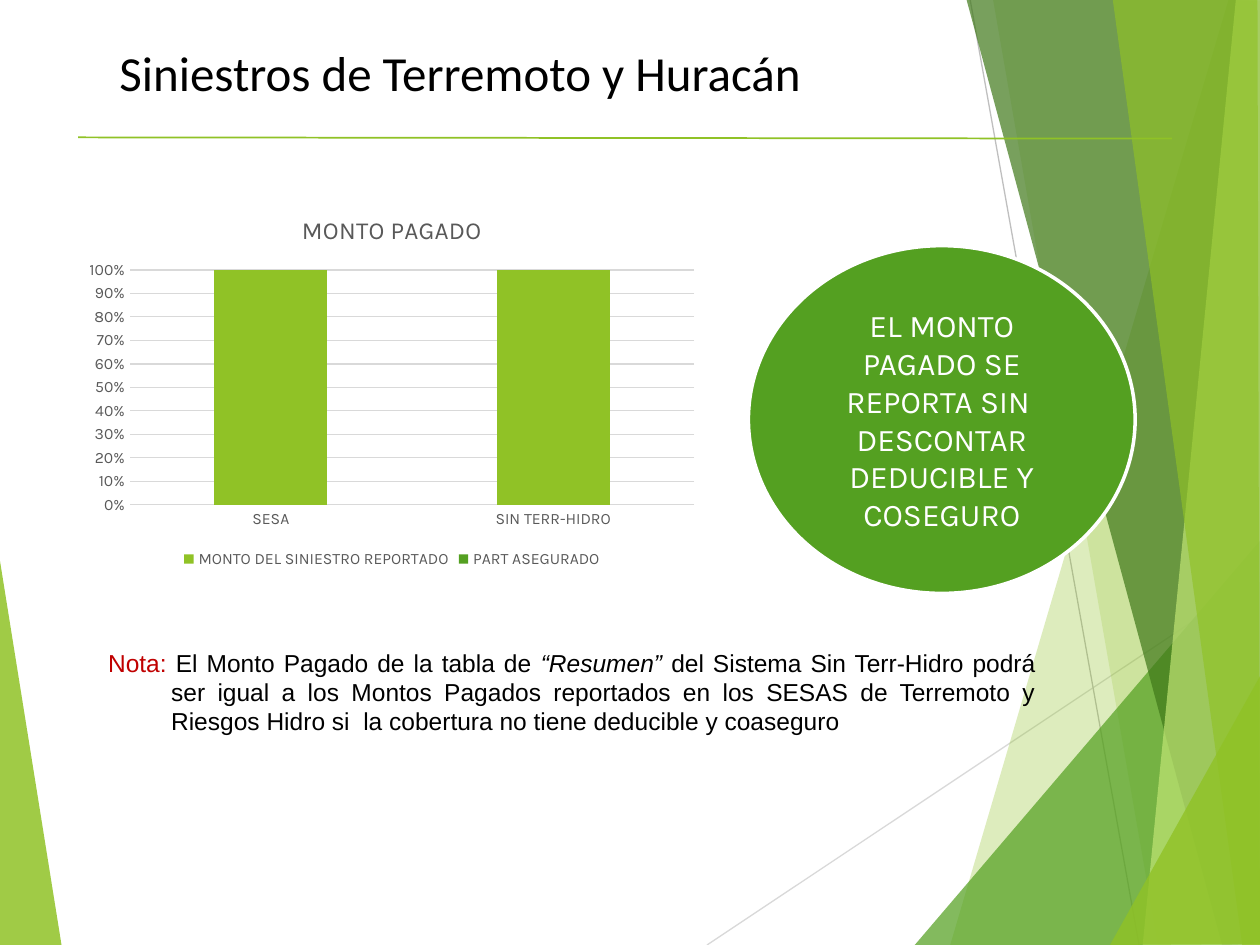
"""Builds the slide on earthquake and hurricane claims."""
from dataclasses import dataclass

from lxml.etree import SubElement
from pptx import Presentation
from pptx.chart.data import CategoryChartData
from pptx.dml.color import RGBColor
from pptx.enum.chart import XL_CHART_TYPE, XL_LEGEND_POSITION, XL_TICK_MARK
from pptx.enum.shapes import MSO_CONNECTOR, MSO_SHAPE
from pptx.enum.text import MSO_ANCHOR, PP_ALIGN
from pptx.oxml.ns import qn
from pptx.util import Pt


@dataclass(frozen=True)
class Theme:
    lime: str = "90C226"
    green: str = "54A021"
    forest: str = "3F7819"
    pale: str = "C0E474"
    white: str = "FFFFFF"
    black: str = "000000"
    red: str = "C00000"
    gray: str = "595959"
    silver: str = "BFBFBF"
    light: str = "D9D9D9"
    title: int = 28
    bubble: int = 18
    body: int = 14
    chart: int = 10
    label: int = 9
    heading_font: str = "Calibri"
    body_font: str = "Arial"
    accent_font: str = "Karla"


def apply(obj, values):
    for name, value in values.items():
        setattr(obj, name, value)


class Deck:
    def __init__(self, theme):
        self.theme = theme
        self.prs = Presentation()
        apply(self.prs, {"slide_width": Pt(720), "slide_height": Pt(540)})
        self.s = self.prs.slides.add_slide(self.prs.slide_layouts[6])

    def font(self, font, name, size, color, **extra):
        apply(font, {"name": name, "size": Pt(size), **extra})
        font.color.rgb = RGBColor.from_string(color)

    def fill(self, sp, color):
        sp.shadow.inherit = False
        sp.fill.solid()
        sp.fill.fore_color.rgb = RGBColor.from_string(color)

    def facet(self, color, opacity, points):
        start, *rest = [(Pt(x), Pt(y)) for x, y in points]
        builder = self.s.shapes.build_freeform(*start, scale=1.0)
        builder.add_line_segments(rest, close=True)
        sp = builder.convert_to_shape()
        self.fill(sp, color)
        sp.line.fill.background()
        clr = sp._element.spPr.find(qn("a:solidFill")).find(qn("a:srgbClr"))
        SubElement(clr, qn("a:alpha")).set("val", str(opacity * 1000))

    def line(self, color, width, *ends):
        sp = self.s.shapes.add_connector(MSO_CONNECTOR.STRAIGHT, *map(Pt, ends))
        sp.line.color.rgb = RGBColor.from_string(color)
        sp.line.width = Pt(width)
        SubElement(sp._element.spPr, qn("a:effectLst"))

    def add_runs(self, sp, runs, name, size, align):
        tf = sp.text_frame
        tf.word_wrap = True
        p = tf.paragraphs[0]
        p.alignment = align
        for text, color, italic in runs:
            r = p.add_run()
            r.text = text
            self.font(r.font, name, size, color, italic=italic)
        return p

    def text(self, box, runs, name, size, align):
        sp = self.s.shapes.add_textbox(*map(Pt, box))
        return self.add_runs(sp, runs, name, size, align)

    def bubble(self, box, text):
        t = self.theme
        sp = self.s.shapes.add_shape(MSO_SHAPE.FLOWCHART_CONNECTOR, *map(Pt, box))
        self.fill(sp, t.green)
        sp.line.color.rgb = RGBColor.from_string(t.white)
        sp.line.width = Pt(2)
        sp.text_frame.vertical_anchor = MSO_ANCHOR.MIDDLE
        self.add_runs(sp, [(text, t.white, False)], t.accent_font, t.bubble, PP_ALIGN.CENTER)

    def chart(self, box, title, categories, series):
        t = self.theme
        data = CategoryChartData()
        data.categories = categories
        for name, values, _ in series:
            data.add_series(name, values)
        kind = XL_CHART_TYPE.COLUMN_STACKED_100
        chart = self.s.shapes.add_chart(kind, *map(Pt, box), data).chart
        self.font(chart.font, t.accent_font, t.chart, t.black)
        apply(chart, {"has_title": True, "has_legend": True})
        tf = chart.chart_title.text_frame
        tf.text = title
        self.font(tf.paragraphs[0].runs[0].font, t.accent_font, t.body, t.gray, bold=False)
        apply(chart.legend, {"position": XL_LEGEND_POSITION.BOTTOM, "include_in_layout": False})
        self.font(chart.legend.font, t.accent_font, t.label, t.gray)
        for axis in (chart.category_axis, chart.value_axis):
            apply(axis, {"major_tick_mark": XL_TICK_MARK.NONE,
                         "minor_tick_mark": XL_TICK_MARK.NONE})
            axis.format.line.fill.background()
            self.font(axis.tick_labels.font, t.accent_font, t.label, t.gray)
        apply(chart.value_axis.tick_labels, {"number_format": "0%",
                                             "number_format_is_linked": False})
        grid = chart.value_axis.major_gridlines.format.line
        grid.color.rgb = RGBColor.from_string(t.light)
        grid.width = Pt(0.75)
        plot = chart.plots[0]
        apply(plot, {"gap_width": 150, "overlap": 100, "vary_by_categories": False})
        for ser, (_, _, color) in zip(plot.series, series):
            ser.format.fill.solid()
            ser.format.fill.fore_color.rgb = RGBColor.from_string(color)


def main():
    t = Theme()
    deck = Deck(t)
    top, bottom, right = -0.7, 540, 720.7

    deck.facet(t.lime, 85, [(-0.7, 316), (35.3, 540.7), (-0.7, bottom)])
    deck.line(t.light, 0.75, 404, 540, 720.7, 329)
    deck.line(t.silver, 0.75, 554.4, 0, 650.9, 540)
    for color, opacity, points in (
        (t.lime, 30, [(702, 0), (543, bottom), (721.4, 540.7), (right, 0.7)]),
        (t.lime, 20, [(567.4, top), (661.7, bottom), (right, bottom), (right, top)]),
        (t.green, 72, [(522.7, bottom), (720, 309), (right, bottom)]),
        (t.forest, 70, [(552.2, top), (698.4, bottom), (right, 539.3), (right, top)]),
        (t.pale, 70, [(706.3, top), (653, bottom), (right, bottom), (720, top)]),
        (t.lime, 65, [(635.8, top), (709.9, bottom), (720, bottom), (718.6, top)]),
        (t.lime, 80, [(634.3, bottom), (right, 385.2), (right, 539.3)]),
    ):
        deck.facet(color, opacity, points)

    deck.text((-1.4, 20.9, 528.5, 41), [("Siniestros de Terremoto y Huracán", t.black, False)],
              t.heading_font, t.title, PP_ALIGN.CENTER)
    deck.line(t.lime, 1, 44.6, 78.5, 669.6, 79.2)
    deck.bubble((427.7, 140.4, 221, 198.7),
                "EL MONTO PAGADO SE REPORTA SIN  DESCONTAR DEDUCIBLE Y COSEGURO")
    p = deck.text((54.7, 366.5, 544.3, 58.3), [
        ("Nota: ", t.red, False),
        ("El Monto Pagado de la tabla de ", t.black, False),
        ("“Resumen” ", t.black, True),
        ("del Sistema Sin Terr-Hidro podrá ser igual a los Montos Pagados reportados "
         "en los SESAS de Terremoto y Riesgos Hidro si  la cobertura no tiene "
         "deducible y coaseguro", t.black, False),
    ], t.body_font, t.body, PP_ALIGN.JUSTIFY)
    p.level = 1
    pPr = p._p.get_or_add_pPr()
    pPr.set("marL", str(Pt(36)))
    pPr.set("indent", str(Pt(-37.2)))
    deck.chart((43.9, 111.6, 360, 216), "MONTO PAGADO", ["SESA", "SIN TERR-HIDRO"], [
        ("MONTO DEL SINIESTRO REPORTADO", (100, 100), t.lime),
        ("PART ASEGURADO", (0, None), t.green),
    ])
    deck.prs.save("out.pptx")


if __name__ == "__main__":
    main()
